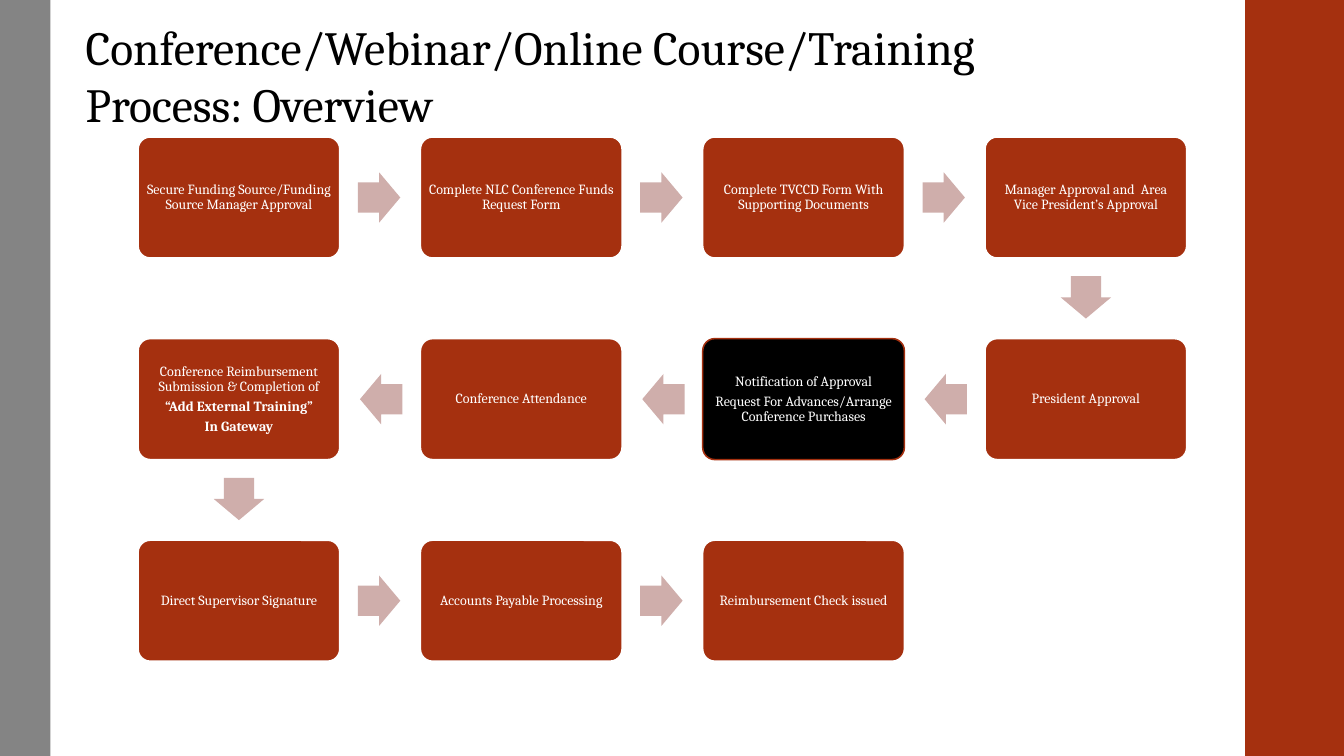
"""Build the training process overview slide."""
from pptx import Presentation
from pptx.dml.color import RGBColor
from pptx.enum.shapes import MSO_SHAPE
from pptx.enum.text import MSO_ANCHOR, MSO_AUTO_SIZE, PP_ALIGN
from pptx.util import Pt

RECTANGLE = MSO_SHAPE.RECTANGLE
ROUNDED = MSO_SHAPE.ROUNDED_RECTANGLE
ARROW = MSO_SHAPE.RIGHT_ARROW
TOP, MIDDLE = MSO_ANCHOR.TOP, MSO_ANCHOR.MIDDLE
LEFT, CENTER = PP_ALIGN.LEFT, PP_ALIGN.CENTER
FIT_SHAPE = MSO_AUTO_SIZE.SHAPE_TO_FIT_TEXT

RUST = RGBColor(0xA5, 0x30, 0x0F)
GRAY = RGBColor(0x84, 0x84, 0x84)
PINK = RGBColor(0xCF, 0xAE, 0xAB)
BLACK = RGBColor(0, 0, 0)
WHITE = RGBColor(0xFF, 0xFF, 0xFF)

EMU_PER_PX = 9144
FONT = "Cambria"
BOX_WIDTH, BOX_HEIGHT = 200, 120
GRID_LEFT, GRID_TOP = 137, 136
COLUMN_PITCH, ROW_PITCH = 280, 200
ARROW_WIDTH, ARROW_HEIGHT = 42, 50
ROTATIONS = {(1, 0): 0, (0, 1): 90, (-1, 0): 180}

TITLE = ["Conference/Webinar/Online Course/Training", "Process: Overview"]
HIGHLIGHTED = "Notification of Approval"
BOLD_LINES = {"“Add External Training”", "In Gateway"}
STEPS = [
    (0, 0, ["Secure Funding Source/Funding Source Manager Approval"]),
    (1, 0, ["Complete NLC Conference Funds Request Form"]),
    (2, 0, ["Complete TVCCD Form With Supporting Documents"]),
    (3, 0, ["Manager Approval and  Area Vice President’s Approval"]),
    (3, 1, ["President Approval"]),
    (2, 1, [HIGHLIGHTED, "Request For Advances/Arrange Conference Purchases"]),
    (1, 1, ["Conference Attendance"]),
    (0, 1, ["Conference Reimbursement Submission & Completion of",
            "“Add External Training”", "In Gateway"]),
    (0, 2, ["Direct Supervisor Signature"]),
    (1, 2, ["Accounts Payable Processing"]),
    (2, 2, ["Reimbursement Check issued"]),
]

TITLE_FRAME = {"word_wrap": True, "auto_size": FIT_SHAPE, "vertical_anchor": TOP}
TITLE_PARAGRAPH = {"alignment": LEFT, "line_spacing": 1.0, "space_before": Pt(0)}
TITLE_FONT = {"name": FONT, "size": Pt(34)}
BOX_FRAME = {"word_wrap": True, "vertical_anchor": MIDDLE}
BOX_PARAGRAPH = {"alignment": CENTER, "line_spacing": 0.9, "space_after": Pt(3.5)}
BOX_FONT = {"name": FONT, "size": Pt(10)}


def px(length):
    """Turn px into EMU."""
    return round(length * EMU_PER_PX)


def apply(target, values):
    """Set each attribute named in values."""
    for name, value in values.items():
        setattr(target, name, value)


def write_lines(text_frame, lines, paragraph_format, font_format, color):
    """Write one formatted paragraph per line."""
    for index, line in enumerate(lines):
        paragraph = text_frame.paragraphs[0] if index == 0 else text_frame.add_paragraph()
        apply(paragraph, paragraph_format)
        run = paragraph.add_run()
        run.text = line
        apply(run.font, font_format)
        run.font.bold = line in BOLD_LINES
        run.font.color.rgb = color


def add_filled_shape(slide, kind, left, top, width, height, fill, line=None):
    """Add a flat preset shape with an optional outline."""
    shape = slide.shapes.add_shape(kind, px(left), px(top), px(width), px(height))
    shape.shadow.inherit = False
    shape.fill.solid()
    shape.fill.fore_color.rgb = fill
    if line is None:
        shape.line.fill.background()
    else:
        shape.line.color.rgb = line
        shape.line.width = Pt(1.1)
    return shape


def add_title(slide):
    """Place and format the slide title."""
    title = slide.shapes.title
    apply(title, {"left": px(75), "top": px(13), "width": px(1279), "height": px(125)})
    apply(title.text_frame, TITLE_FRAME)
    write_lines(title.text_frame, TITLE, TITLE_PARAGRAPH, TITLE_FONT, BLACK)


def add_step(slide, column, row, lines):
    """Add one process box at its grid cell."""
    fill, line = (BLACK, RUST) if HIGHLIGHTED in lines else (RUST, WHITE)
    left = GRID_LEFT + column * COLUMN_PITCH
    top = GRID_TOP + row * ROW_PITCH
    box = add_filled_shape(slide, ROUNDED, left, top, BOX_WIDTH, BOX_HEIGHT, fill, line)
    box.adjustments[0] = 0.1
    frame = box.text_frame
    apply(frame, BOX_FRAME)
    for side in ("left", "top", "right", "bottom"):
        setattr(frame, f"margin_{side}", px(4))
    write_lines(frame, lines, BOX_PARAGRAPH, BOX_FONT, WHITE)


def add_arrow(slide, start, end):
    """Add a block arrow halfway between two grid cells."""
    across, down = end[0] - start[0], end[1] - start[1]
    center_x = GRID_LEFT + BOX_WIDTH / 2 + (start[0] + end[0]) / 2 * COLUMN_PITCH - across
    center_y = GRID_TOP + BOX_HEIGHT / 2 + (start[1] + end[1]) / 2 * ROW_PITCH - down
    arrow = add_filled_shape(slide, ARROW, center_x - ARROW_WIDTH / 2,
                             center_y - ARROW_HEIGHT / 2, ARROW_WIDTH, ARROW_HEIGHT, PINK)
    arrow.adjustments[0] = 0.6
    arrow.adjustments[1] = 0.5
    arrow.rotation = ROTATIONS[across, down]


def main():
    """Build and save the presentation."""
    presentation = Presentation()
    presentation.slide_width = px(1333)
    presentation.slide_height = px(750)
    slide = presentation.slides.add_slide(presentation.slide_layouts[5])
    add_filled_shape(slide, RECTANGLE, 1235, 0, 98, 750, RUST)
    add_filled_shape(slide, RECTANGLE, 0, 0, 50, 750, GRAY)
    add_title(slide)
    for step in STEPS:
        add_step(slide, *step)
    for start, end in zip(STEPS, STEPS[1:]):
        add_arrow(slide, start[:2], end[:2])
    presentation.save("out.pptx")


if __name__ == "__main__":
    main()
